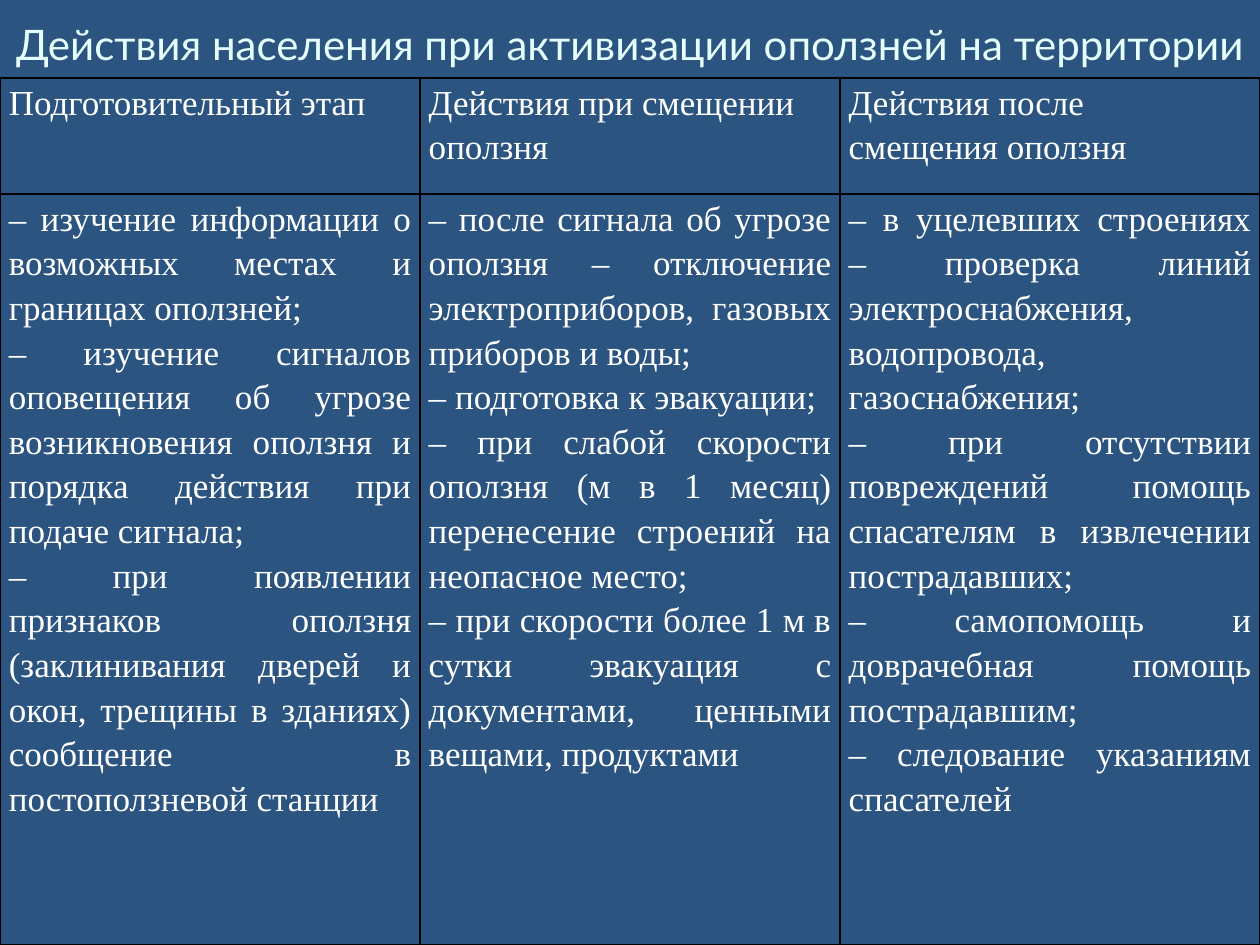
import pptx
import pptx.dml.color
import pptx.enum.text
import pptx.oxml
import pptx.oxml.ns
import pptx.util
from pptx.util import Inches

COLORS = {"background": "2B5481", "title": "E5FFFF", "text": "FFFFFF", "border": "000000"}

TITLE = "Действия населения при активизации оползней на территории"

# Each column: header lines, then body paragraphs
STAGES = [
    (["Подготовительный этап"],
     ["– изучение информации о возможных местах и границах оползней;",
      "– изучение сигналов оповещения об угрозе возникновения оползня и порядка действия "
      "при подаче сигнала;",
      "– при появлении признаков оползня (заклинивания дверей и окон, трещины в зданиях) "
      "сообщение в постоползневой станции"]),
    (["Действия при смещении", "оползня"],
     ["– после сигнала об угрозе оползня – отключение электроприборов, газовых приборов и воды;",
      "– подготовка к эвакуации;",
      "– при слабой скорости оползня (м в 1 месяц) перенесение строений на неопасное место;",
      "– при скорости более 1 м в сутки эвакуация с документами, ценными вещами, продуктами"]),
    (["Действия после", "смещения оползня"],
     ["– в уцелевших строениях – проверка линий электроснабжения, водопровода, газоснабжения;",
      "– при отсутствии повреждений помощь спасателям в извлечении пострадавших;",
      "– самопомощь и доврачебная помощь пострадавшим;",
      "– следование указаниям спасателей"]),
]


class SlideBuilder:
    title_font, title_size = "Lato", 24
    body_font, body_size = "Times New Roman", 20
    line_spacing = 1.15
    border_width = 1

    def __init__(self, prs):
        self.s = prs.slides.add_slide(prs.slide_layouts[5])
        fill = self.s.background.fill
        fill.solid()
        fill.fore_color.rgb = self.color("background")

    def color(self, name):
        return pptx.dml.color.RGBColor.from_string(COLORS[name])

    def add_run(self, p, text, font, size, color):
        r = p.add_run()
        r.text = text
        r.font.name = font
        r.font.size = pptx.util.Pt(size)
        r.font.color.rgb = self.color(color)

    def title(self, text, left, top, width, height):
        sp = self.s.shapes.title
        sp.left, sp.top, sp.width, sp.height = left, top, width, height
        tf = sp.text_frame
        tf.auto_size = pptx.enum.text.MSO_AUTO_SIZE.NONE
        tf.vertical_anchor = pptx.enum.text.MSO_ANCHOR.MIDDLE
        tf.margin_left = tf.margin_right = 0
        p = tf.paragraphs[0]
        p.alignment = pptx.enum.text.PP_ALIGN.CENTER
        self.add_run(p, text, self.title_font, self.title_size, "title")

    def borders(self, cell):
        tc_pr = cell._tc.get_or_add_tcPr()
        width = pptx.util.Pt(self.border_width)
        for side in ("L", "R", "T", "B"):
            tc_pr.append(pptx.oxml.parse_xml(
                f'<a:ln{side} {pptx.oxml.ns.nsdecls("a")} w="{width}"><a:solidFill>'
                f'<a:srgbClr val="{COLORS["border"]}"/></a:solidFill></a:ln{side}>'))

    def cell(self, cell, lines):
        cell.margin_left = cell.margin_right = Inches(0.07)
        cell.margin_top = cell.margin_bottom = 0
        self.borders(cell)
        cell.fill.background()
        tf = cell.text_frame
        for i, line in enumerate(lines):
            p = tf.add_paragraph() if i else tf.paragraphs[0]
            p.alignment = pptx.enum.text.PP_ALIGN.JUSTIFY
            p.line_spacing = self.line_spacing
            self.add_run(p, line, self.body_font, self.body_size, "text")

    def table(self, columns, left, top, width, row_heights):
        table = self.s.shapes.add_table(len(row_heights), len(columns), left, top,
                                        width, sum(row_heights)).table
        table.first_row = table.horz_banding = False
        for row, height in zip(table.rows, row_heights):
            row.height = height
        for c, column in enumerate(columns):
            table.columns[c].width = width // len(columns)
            for r, lines in enumerate(column):
                self.cell(table.cell(r, c), lines)


def main():
    prs = pptx.Presentation()
    prs.slide_width, prs.slide_height = Inches(10), Inches(7.5)
    builder = SlideBuilder(prs)

    # Title
    builder.title(TITLE, 0, 0, prs.slide_width, Inches(0.7))

    # Table of stages, down to the bottom of the slide
    top, header = Inches(0.62), Inches(0.92)
    builder.table(STAGES, 0, top, prs.slide_width,
                  [header, prs.slide_height - top - header])

    prs.save("out.pptx")


if __name__ == "__main__":
    main()
